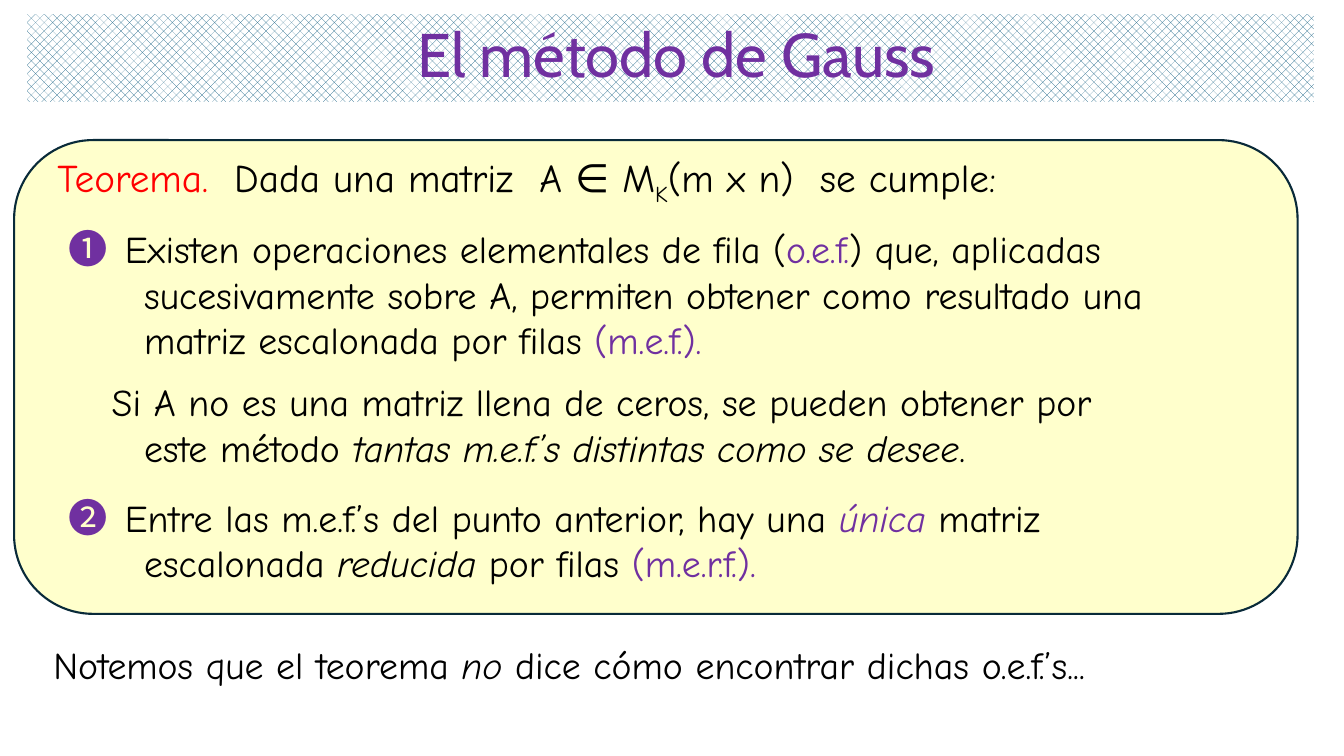
import pptx
import pptx.dml.color
import pptx.enum.dml
import pptx.enum.shapes
import pptx.enum.text
import pptx.oxml.ns
import pptx.util
from dataclasses import dataclass
from lxml import etree


@dataclass(frozen=True)
class Theme:
    ink: str = "000000"
    purple: str = "7030A0"
    red: str = "FF0000"
    cream: str = "FFFFCC"
    border: str = "092A39"
    weave: str = "156082"
    white: str = "FFFFFF"
    title_font: str = "Cabin"
    text_font: str = "Comic Neue"
    marker_font: str = "Noto Sans CJK JP"
    title_size: int = 44
    lead_size: int = 28
    text_size: int = 27


THEME = Theme()
PX = 9144  # 100 px to the inch


def rgb(value):
    return pptx.dml.color.RGBColor.from_string(value)


def run(text, color=THEME.ink, size=THEME.text_size, font=THEME.text_font,
        italic=False, baseline=0):
    return dict(text=text, color=color, size=size, font=font,
                italic=italic, baseline=baseline)


def marker(symbol):
    return run(symbol + "\t", THEME.purple, THEME.lead_size, THEME.marker_font)


class SlideBuilder:
    def __init__(self, presentation, theme):
        self.theme = theme
        self.slide = presentation.slides.add_slide(presentation.slide_layouts[1])

    def place(self, shape, box):
        shape.left, shape.top, shape.width, shape.height = (n * PX for n in box)

    def add_runs(self, paragraph, runs, left=0, first=0):
        """Fill a paragraph; left and first are its indents in px."""
        properties = paragraph._p.get_or_add_pPr()
        properties.set("marL", str(left * PX))
        properties.set("indent", str(first * PX))
        etree.SubElement(properties, pptx.oxml.ns.qn("a:buNone"))
        for style in runs:
            piece = paragraph.add_run()
            piece.text = style["text"]
            font = piece.font
            font.name = style["font"]
            font.size = pptx.util.Pt(style["size"])
            font.color.rgb = rgb(style["color"])
            font.bold = False
            font.italic = style["italic"]
            if style["font"] == self.theme.marker_font:
                east_asian = etree.SubElement(font._element, pptx.oxml.ns.qn("a:ea"))
                east_asian.set("typeface", style["font"])
            if style["baseline"]:
                font._element.set("baseline", str(style["baseline"] * 1000))

    def placeholder(self, shape, box, runs, left=0):
        self.place(shape, box)
        frame = shape.text_frame
        frame.auto_size = pptx.enum.text.MSO_AUTO_SIZE.NONE
        frame.word_wrap = True
        paragraph = frame.paragraphs[0]
        paragraph.line_spacing = 0.9
        self.add_runs(paragraph, runs, left)
        return paragraph

    def title(self, box, text):
        theme = self.theme
        shape = self.slide.shapes.title
        runs = [run(text, theme.purple, theme.title_size, theme.title_font)]
        paragraph = self.placeholder(shape, box, runs, left=12)
        paragraph.alignment = pptx.enum.text.PP_ALIGN.CENTER
        shape.text_frame.vertical_anchor = pptx.enum.text.MSO_ANCHOR.MIDDLE
        shape.fill.patterned()
        shape.fill.pattern = pptx.enum.dml.MSO_PATTERN.WEAVE
        shape.fill.fore_color.rgb = rgb(theme.weave)
        shape.fill.back_color.rgb = rgb(theme.white)

    def lead(self, box, runs):
        paragraph = self.placeholder(self.slide.placeholders[1], box, runs, left=9)
        paragraph.space_before = pptx.util.Pt(10)

    def card(self, box):
        shapes = self.slide.shapes
        shape = shapes.add_shape(
            pptx.enum.shapes.MSO_SHAPE.ROUNDED_RECTANGLE, 0, 0, 0, 0)
        self.place(shape, box)
        shape.shadow.inherit = False
        shape.fill.solid()
        shape.fill.fore_color.rgb = rgb(self.theme.cream)
        shape.line.color.rgb = rgb(self.theme.border)
        shape.line.width = pptx.util.Pt(1.5)
        shapes._spTree.insert(2, shape._element)  # behind the placeholders

    def text(self, box, lines):
        """Each line is (left indent, first-line indent, runs)."""
        shape = self.slide.shapes.add_textbox(0, 0, 0, 0)
        self.place(shape, box)
        frame = shape.text_frame
        frame.word_wrap = True
        for index, (left, first, runs) in enumerate(lines):
            paragraph = frame.add_paragraph() if index else frame.paragraphs[0]
            self.add_runs(paragraph, runs, left, first)


def main():
    presentation = pptx.Presentation()
    presentation.slide_width = 1333 * PX
    presentation.slide_height = 750 * PX
    builder = SlideBuilder(presentation, THEME)
    purple = THEME.purple
    hang, wrapped, plain = 56, 75, 43  # text indents in px

    # Title and theorem card
    builder.title((27, 14, 1276, 87), "El método de Gauss")
    builder.card((14, 139, 1273, 470))
    builder.lead((38, 148, 1224, 60), [
        run("Teorema.  ", THEME.red, THEME.lead_size),
        run("Dada una matriz  A ∈ M", size=THEME.lead_size),
        run("K", size=THEME.lead_size, baseline=-25),
        run("(m x n)  se cumple", size=THEME.lead_size),
        run(":"),
    ])

    # Statements of the theorem
    builder.text((58, 218, 1178, 150), [
        (hang, -hang, [marker("➊"),
                       run("Existen operaciones elementales de fila ("),
                       run("o.e.f.", purple), run(") que, aplicadas")]),
        (wrapped, 0, [run("sucesivamente sobre A, permiten obtener como resultado una")]),
        (wrapped, 0, [run("matriz escalonada por filas "), run("(m.e.f.).", purple)]),
    ])
    builder.text((58, 371, 1178, 105), [
        (plain, 0, [run("Si A no es una matriz llena de ceros, se pueden obtener por")]),
        (wrapped, 0, [run("este método "),
                      run("tantas m.e.f.’s distintas como se desee", italic=True),
                      run(".")]),
    ])
    builder.text((58, 484, 1245, 105), [
        (hang, -hang, [marker("➋"),
                       run("Entre las m.e.f.’s del punto anterior, hay una "),
                       run("única", purple, italic=True), run(" matriz")]),
        (wrapped, 0, [run("escalonada "), run("reducida", italic=True),
                      run(" por filas "), run("(m.e.r.f.).", purple)]),
    ])

    # Closing remark
    builder.text((0, 632, 1262, 60), [
        (plain, 0, [run("Notemos que el teorema "), run("no", italic=True),
                    run(" dice cómo encontrar dichas o.e.f.’s...")]),
    ])
    presentation.save("out.pptx")


if __name__ == "__main__":
    main()
